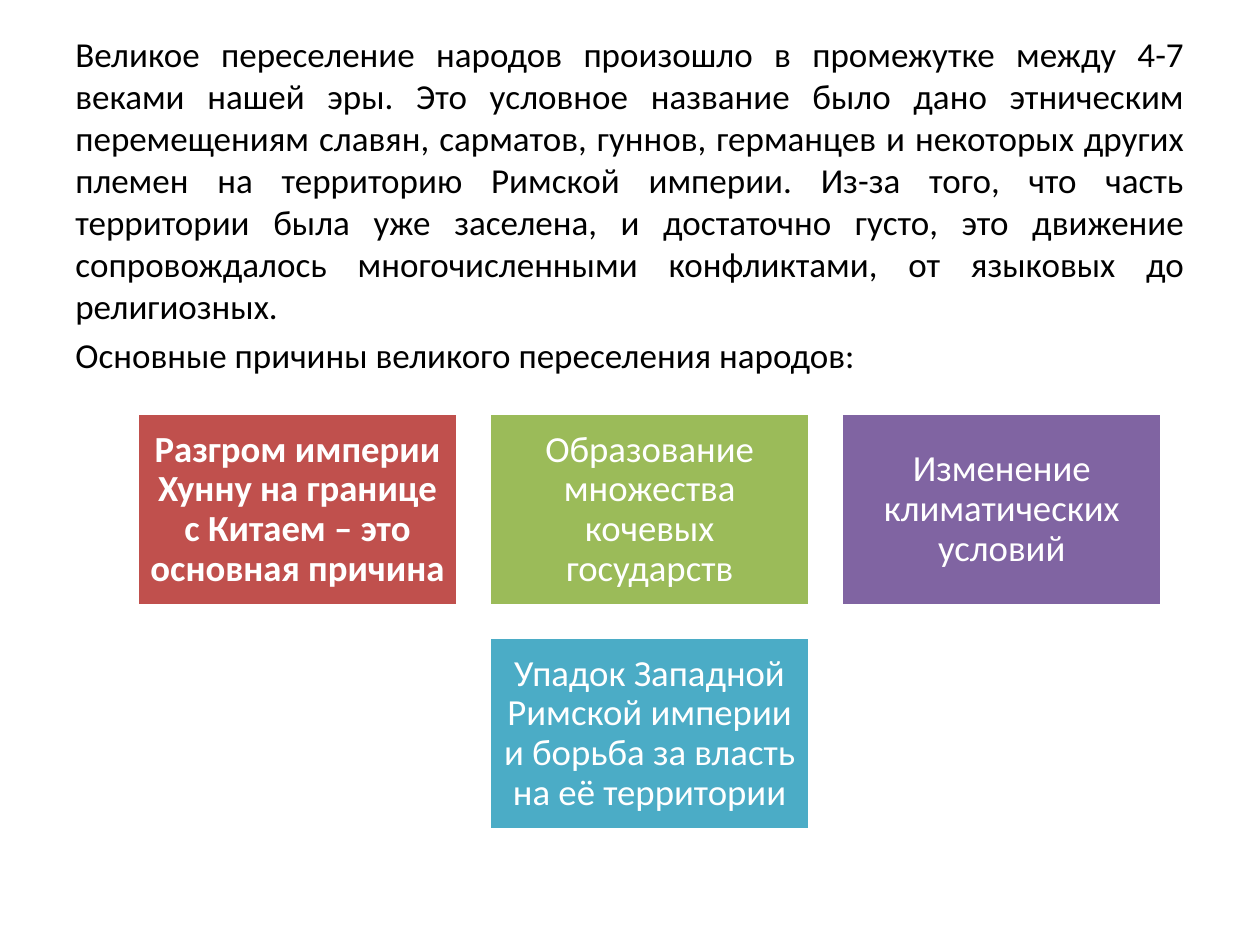
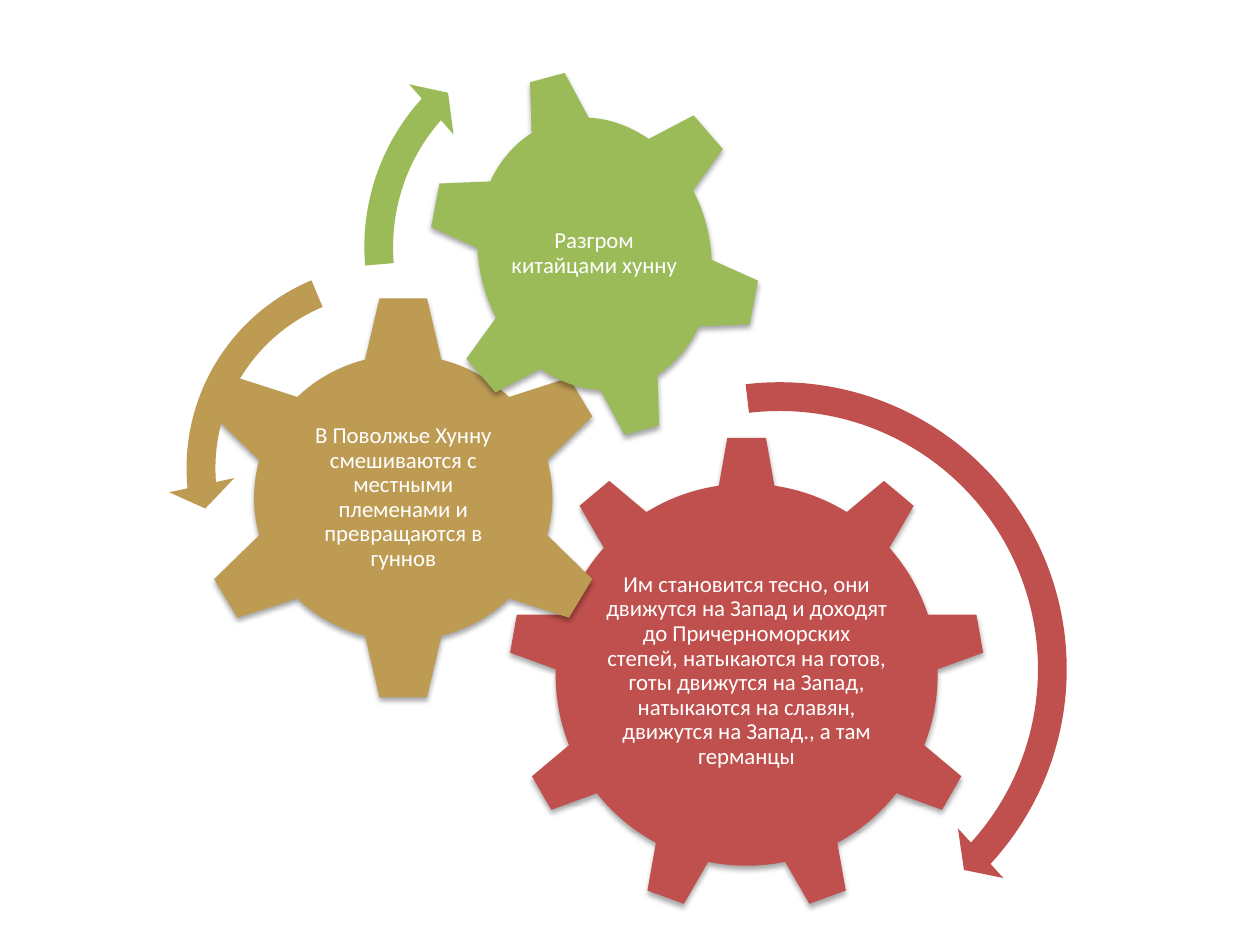
from dataclasses import dataclass

from lxml.etree import SubElement
from pptx import Presentation
from pptx.dml.color import RGBColor
from pptx.enum.shapes import MSO_SHAPE
from pptx.enum.text import MSO_ANCHOR, PP_ALIGN
from pptx.oxml.ns import qn
from pptx.util import Pt

FONT = "Calibri"
WHITE = "FFFFFF"
BLACK = "000000"
RED = "C0504D"
GREEN = "9BBB59"
PURPLE = "8064A2"
TEAL = "4BACC6"
OCHRE = "BD9B53"

CARD_WIDTH, CARD_HEIGHT, CARD_GAP = 182.9, 109.7, 18.3
CARDS_LEFT, CARDS_TOP, CARDS_PER_ROW = 78.6, 236.4, 3


@dataclass(frozen=True)
class Box:
    left: float
    top: float
    width: float
    height: float

    def lengths(self) -> tuple:
        return Pt(self.left), Pt(self.top), Pt(self.width), Pt(self.height)


@dataclass(frozen=True)
class Cause:
    text: str
    color: str
    bold: bool = False


@dataclass(frozen=True)
class Gear:
    text: str
    color: str
    preset: MSO_SHAPE
    box: Box
    label_box: Box
    rotation: float = 0


@dataclass(frozen=True)
class TurnArrow:
    color: str
    preset: MSO_SHAPE
    box: Box
    adjustments: tuple


INTRO = (
    "Великое переселение народов произошло в промежутке между 4-7 веками нашей эры. "
    "Это условное название было дано этническим перемещениям славян, сарматов, гуннов, "
    "германцев и некоторых других племен на территорию Римской империи. Из-за того, что "
    "часть территории была уже заселена, и достаточно густо, это движение сопровождалось "
    "многочисленными конфликтами, от языковых до религиозных.",
    "Основные причины великого переселения народов:",
)

CAUSES = (
    Cause("Разгром империи Хунну на границе с Китаем – это основная причина", RED, True),
    Cause("Образование множества кочевых государств", GREEN),
    Cause("Изменение климатических условий", PURPLE),
    Cause("Упадок Западной Римской империи и борьба за власть на её территории", TEAL),
)

GEARS = (
    Gear(
        "Им становится тесно, они движутся на Запад и доходят до Причерноморских степей, "
        "натыкаются на готов, готы движутся на Запад, натыкаются на славян, "
        "движутся на Запад., а там германцы",
        RED, MSO_SHAPE.GEAR_9,
        Box(290.2, 249.1, 272.9, 272.9), Box(344.9, 313.2, 163.4, 140.4),
    ),
    Gear(
        "В Поволжье Хунну смешиваются с местными племенами и превращаются в гуннов",
        OCHRE, MSO_SHAPE.GEAR_6,
        Box(110.2, 167.8, 240.5, 233.3), Box(169.9, 226.8, 121, 115.2),
    ),
    Gear(
        "Разгром китайцами хунну",
        GREEN, MSO_SHAPE.GEAR_6,
        Box(245.5, 38.2, 188.6, 213.8), Box(285.1, 86.4, 108.7, 117.4), 345,
    ),
)

TURN_ARROWS = (
    TurnArrow(RED, MSO_SHAPE.CIRCULAR_ARROW, Box(270.7, 207.4, 349.9, 349.9),
              (0.047, 2.99, 25.509, 157.883, 0.055)),
    TurnArrow(OCHRE, MSO_SHAPE.LEFT_CIRCULAR_ARROW, Box(95.8, 140.4, 254.2, 254.2),
              (0.065, 4.3, 104.891, 148.378, 0.075)),
    TurnArrow(GREEN, MSO_SHAPE.CIRCULAR_ARROW, Box(197.3, 4.3, 273.6, 273.6),
              (0.06, 3.941, 133.138, 105.082, 0.07)),
)


def rgb(color: str) -> RGBColor:
    return RGBColor.from_string(color)


def set_font(paragraph, size: float, color: str, bold: bool = False) -> None:
    font = paragraph.font
    font.name, font.size, font.bold = FONT, Pt(size), bold
    font.color.rgb = rgb(color)


def add_filled_shape(slide, preset: MSO_SHAPE, box: Box, color: str):
    shape = slide.shapes.add_shape(preset, *box.lengths())
    shape.fill.solid()
    shape.fill.fore_color.rgb = rgb(color)
    shape.line.fill.background()
    shape.shadow.inherit = False
    return shape


def write_label(frame, text: str, size: float, inset: float, bold: bool = False) -> None:
    frame.word_wrap = True
    frame.vertical_anchor = MSO_ANCHOR.MIDDLE
    frame.margin_left = frame.margin_right = Pt(inset)
    frame.margin_top = frame.margin_bottom = Pt(inset)
    paragraph = frame.paragraphs[0]
    paragraph.text = text
    paragraph.alignment = PP_ALIGN.CENTER
    paragraph.line_spacing = 0.9
    paragraph.space_after = Pt(size * 0.35)
    set_font(paragraph, size, WHITE, bold)


def cast_shadow(shape) -> None:
    effects = shape._element.spPr.find(qn("a:effectLst"))
    shadow = SubElement(
        effects, qn("a:outerShdw"), blurRad=str(Pt(3.1)), dist=str(Pt(1.8)),
        dir="5400000", rotWithShape="0",
    )
    shade = SubElement(shadow, qn("a:srgbClr"), val=BLACK)
    SubElement(shade, qn("a:alpha"), val="35000")


def draw_intro(slide) -> None:
    frame = slide.shapes.add_textbox(*Box(36, 15.1, 648, 356.4).lengths()).text_frame
    frame.word_wrap = True
    for index, text in enumerate(INTRO):
        paragraph = frame.add_paragraph() if index else frame.paragraphs[0]
        paragraph.text = text
        paragraph.alignment = PP_ALIGN.JUSTIFY
        paragraph.space_before = Pt(4)
        set_font(paragraph, 20, BLACK)


def draw_causes(slide) -> None:
    for index, cause in enumerate(CAUSES):
        row, column = divmod(index, CARDS_PER_ROW)
        row_count = min(CARDS_PER_ROW, len(CAUSES) - row * CARDS_PER_ROW)
        column += (CARDS_PER_ROW - row_count) / 2
        box = Box(
            CARDS_LEFT + column * (CARD_WIDTH + CARD_GAP),
            CARDS_TOP + row * (CARD_HEIGHT + CARD_GAP),
            CARD_WIDTH, CARD_HEIGHT,
        )
        card = add_filled_shape(slide, MSO_SHAPE.RECTANGLE, box, cause.color)
        card.line.color.rgb = rgb(WHITE)
        card.line.width = Pt(2)
        write_label(card.text_frame, cause.text, 21, 6.3, cause.bold)


def draw_gear(slide, gear: Gear) -> None:
    wheel = add_filled_shape(slide, gear.preset, gear.box, gear.color)
    wheel.rotation = gear.rotation
    cast_shadow(wheel)
    label = slide.shapes.add_textbox(*gear.label_box.lengths())
    write_label(label.text_frame, gear.text, 13, 1.3)


def draw_turn_arrow(slide, arrow: TurnArrow) -> None:
    turn = add_filled_shape(slide, arrow.preset, arrow.box, arrow.color)
    for index, value in enumerate(arrow.adjustments):
        turn.adjustments[index] = value


def main() -> None:
    presentation = Presentation()
    presentation.slide_width, presentation.slide_height = Pt(720), Pt(540)
    blank = presentation.slide_layouts[6]

    causes_slide = presentation.slides.add_slide(blank)
    draw_intro(causes_slide)
    draw_causes(causes_slide)

    gears_slide = presentation.slides.add_slide(blank)
    for gear in GEARS:
        draw_gear(gears_slide, gear)
    for arrow in TURN_ARROWS:
        draw_turn_arrow(gears_slide, arrow)

    presentation.save("out.pptx")


if __name__ == "__main__":
    main()
